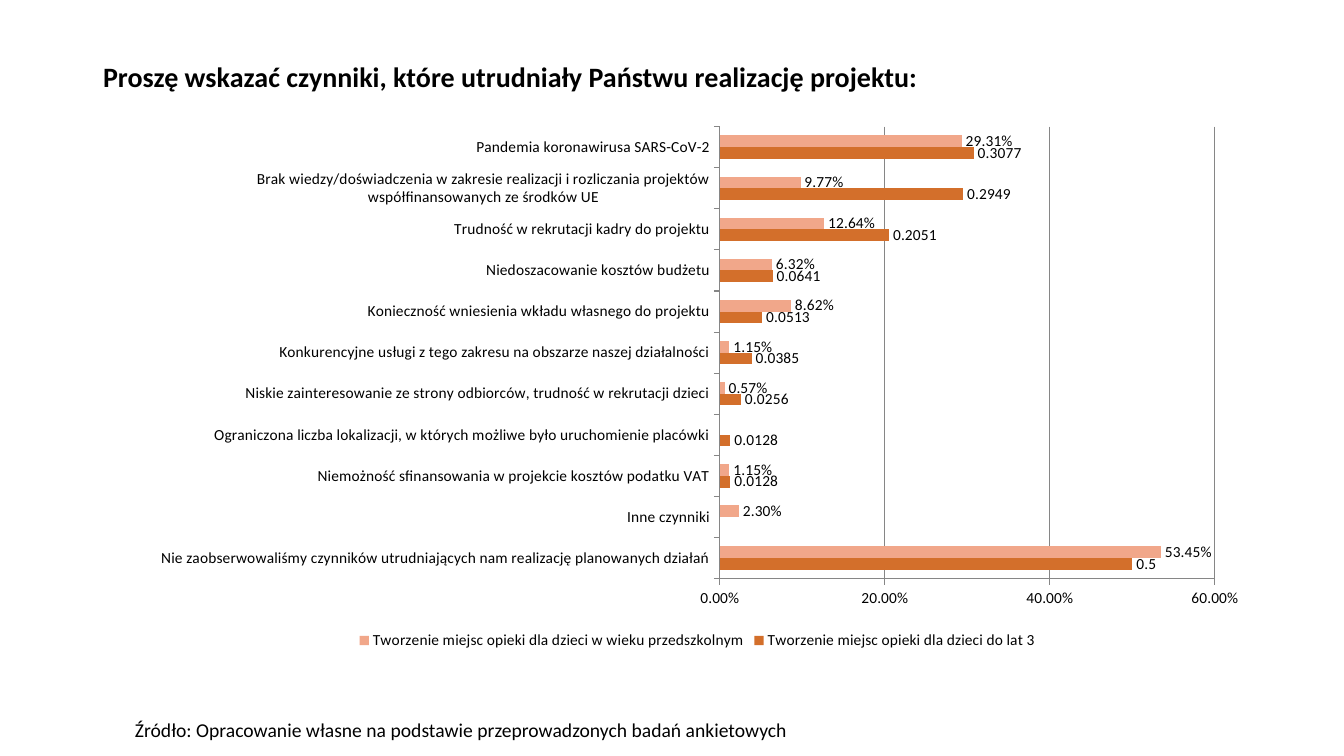
from lxml.etree import SubElement
from pptx import Presentation
from pptx.chart.data import CategoryChartData
from pptx.dml.color import RGBColor
from pptx.enum.chart import XL_CHART_TYPE, XL_LABEL_POSITION, XL_LEGEND_POSITION, XL_TICK_MARK
from pptx.enum.text import MSO_ANCHOR, MSO_AUTO_SIZE, PP_ALIGN
from pptx.oxml.ns import qn
from pptx.util import Pt

EMU_PER_PX = 914400 / 100.8
FONT = "Calibri"
BLACK = "000000"
GREY = "868686"

# factor, children up to 3, preschool children; listed from the bottom up
FACTORS = [
    ("Nie zaobserwowaliśmy czynników utrudniających nam realizację planowanych działań", 0.5, 0.5345),
    ("Inne czynniki", None, 0.023),
    ("Niemożność sfinansowania w projekcie kosztów podatku VAT", 0.0128, 0.0115),
    ("Ograniczona liczba lokalizacji, w których możliwe było uruchomienie placówki", 0.0128, None),
    ("Niskie zainteresowanie ze strony odbiorców, trudność w rekrutacji dzieci", 0.0256, 0.0057),
    ("Konkurencyjne usługi z tego zakresu na obszarze naszej działalności", 0.0385, 0.0115),
    ("Konieczność wniesienia wkładu własnego do projektu", 0.0513, 0.0862),
    ("Niedoszacowanie kosztów budżetu", 0.0641, 0.0632),
    ("Trudność w rekrutacji kadry do projektu", 0.2051, 0.1264),
    ("Brak wiedzy/doświadczenia w zakresie realizacji i rozliczania projektów "
     "współfinansowanych ze środków UE", 0.2949, 0.0977),
    ("Pandemia koronawirusa SARS-CoV-2", 0.3077, 0.2931),
]
# name, fill, label format
SERIES = [
    ("Tworzenie miejsc opieki dla dzieci do lat 3", "D36F2B", "General"),
    ("Tworzenie miejsc opieki dla dzieci w wieku przedszkolnym", "F1A78A", "0.00%"),
]


def px(n):
    return round(n * EMU_PER_PX)


def rgb(color):
    return RGBColor.from_string(color)


def style_font(font, size, bold=False):
    font.name, font.size, font.bold = FONT, Pt(size), bold
    font.color.rgb = rgb(BLACK)


def fill_text(sp, text, size, bold=False, anchor=MSO_ANCHOR.TOP):
    tf = sp.text_frame
    tf.word_wrap = True
    tf.auto_size = MSO_AUTO_SIZE.NONE
    tf.vertical_anchor = anchor
    tf.text = text
    p = tf.paragraphs[0]
    p.alignment = PP_ALIGN.LEFT
    p.line_spacing = 0.9
    style_font(p.font, size, bold)
    return p


def add_title(s, x, y, w, h):
    sp = s.shapes.title
    sp.left, sp.top, sp.width, sp.height = map(px, (x, y, w, h))
    fill_text(sp, "Proszę wskazać czynniki, które utrudniały Państwu realizację projektu:",
              20, bold=True, anchor=MSO_ANCHOR.MIDDLE)


def add_source(s, x, y, w, h):
    sp = s.shapes.add_textbox(*map(px, (x, y, w, h)))
    p = fill_text(sp, "Źródło: Opracowanie własne na podstawie przeprowadzonych badań ankietowych", 14)
    p.space_before = Pt(10)


def place_plot(chart, x, y, w, h):
    """Fix the inner plot area, in fractions of the chart."""
    plot_area = chart._chartSpace.chart.plotArea
    layout = plot_area.find(qn("c:layout"))
    if layout is None:
        layout = SubElement(plot_area, qn("c:layout"))
        plot_area.insert(0, layout)
    manual = SubElement(layout, qn("c:manualLayout"))
    for tag, val in (("layoutTarget", "inner"), ("xMode", "edge"), ("yMode", "edge"),
                     ("x", x), ("y", y), ("w", w), ("h", h)):
        SubElement(manual, qn(f"c:{tag}")).set("val", str(val))


def style_axes(chart):
    for axis in (chart.category_axis, chart.value_axis):
        axis.major_tick_mark = XL_TICK_MARK.OUTSIDE
        axis.minor_tick_mark = XL_TICK_MARK.NONE
        axis.format.line.color.rgb = rgb(GREY)
    value = chart.value_axis
    value.minimum_scale, value.maximum_scale, value.major_unit = 0, 0.6, 0.2
    value.tick_labels.number_format = "0.00%"
    value.tick_labels.number_format_is_linked = False
    value.has_major_gridlines = True
    value.major_gridlines.format.line.color.rgb = rgb(GREY)


def add_factor_chart(s, x, y, w, h):
    names, *columns = zip(*FACTORS)
    data = CategoryChartData()
    data.categories = names
    for (name, _, fmt), values in zip(SERIES, columns):
        data.add_series(name, values, number_format=fmt)
    chart = s.shapes.add_chart(XL_CHART_TYPE.BAR_CLUSTERED, *map(px, (x, y, w, h)), data).chart
    chart.has_title = False
    style_font(chart.font, 11)
    style_axes(chart)
    place_plot(chart, 0.52, 0.02, 0.44, 0.84)

    plot = chart.plots[0]
    plot.vary_by_categories = False
    plot.gap_width, plot.overlap = 150, 0
    for series, (_, color, fmt) in zip(plot.series, SERIES):
        series.format.fill.solid()
        series.format.fill.fore_color.rgb = rgb(color)
        labels = series.data_labels
        labels.show_value = True
        labels.position = XL_LABEL_POSITION.OUTSIDE_END
        labels.number_format = fmt
        labels.number_format_is_linked = False

    chart.has_legend = True
    chart.legend.position = XL_LEGEND_POSITION.BOTTOM
    chart.legend.include_in_layout = False


def main():
    prs = Presentation()
    prs.slide_width, prs.slide_height = px(1344), px(756)
    s = prs.slides.add_slide(prs.slide_layouts[5])
    add_title(s, 93, 40, 1159, 76)
    add_source(s, 125, 716, 1159, 57)
    add_factor_chart(s, 135, 116, 1125, 538)
    prs.save("out.pptx")


if __name__ == "__main__":
    main()
